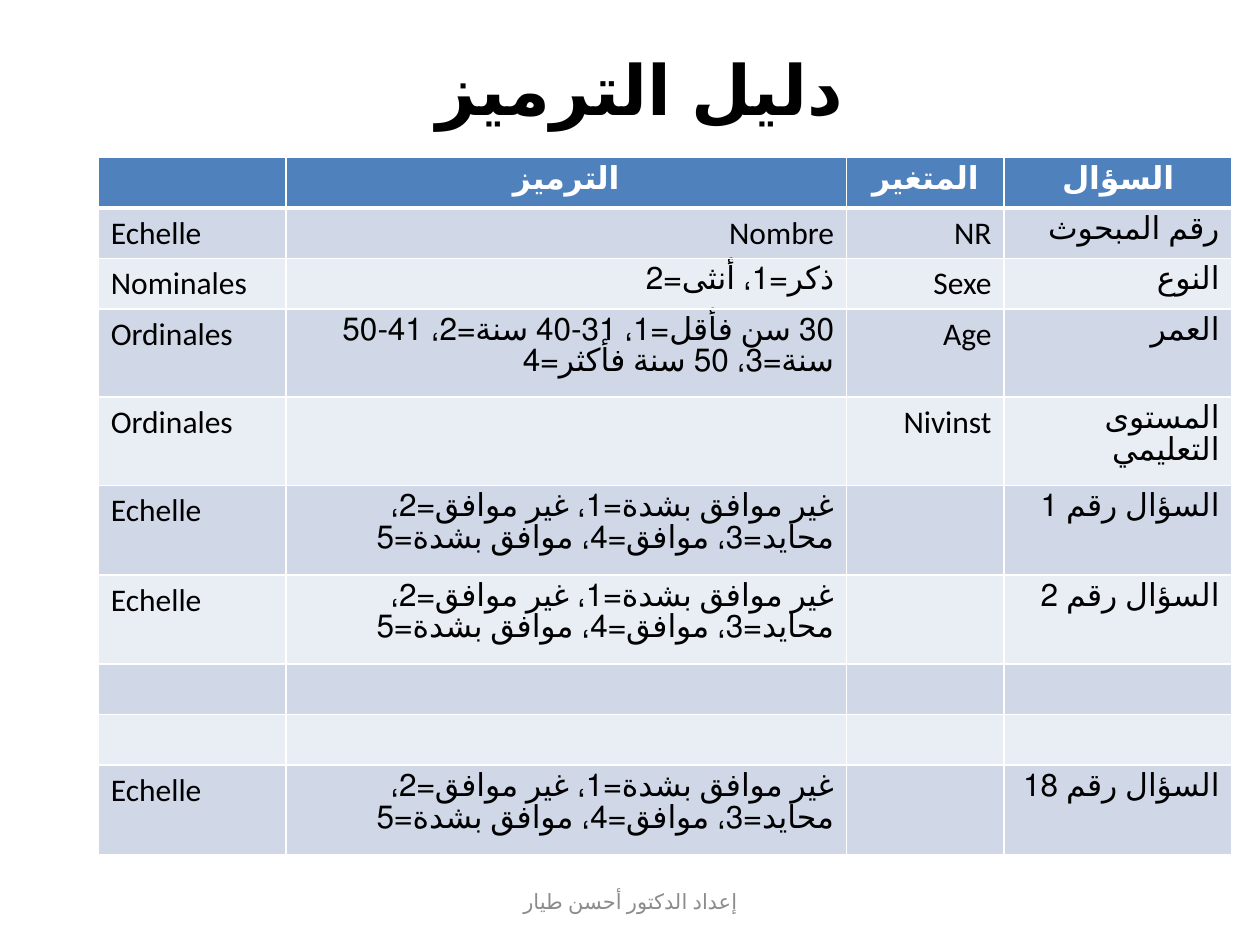
import pptx
import pptx.util
import pptx.dml.color
import pptx.enum.lang
import pptx.enum.text
import pptx.oxml
import pptx.oxml.ns
from pptx.util import Inches

ALIGN = pptx.enum.text.PP_ALIGN
LANGUAGE = pptx.enum.lang.MSO_LANGUAGE_ID
SCALE = "غير موافق بشدة=1، غير موافق=2، محايد=3، موافق=4، موافق بشدة=5"
HEADINGS = ["", "الترميز", "المتغير", "السؤال"]
CODES = [
    ("Echelle", "Nombre", "NR", "رقم المبحوث", 0.4),
    ("Nominales", "ذكر=1، أنثى=2", "Sexe", "النوع", 0.4),
    ("Ordinales", "30 سن فأقل=1، 31-40 سنة=2، 41-50 سنة=3، 50 سنة فأكثر=4",
     "Age", "العمر", 0.6),
    ("Ordinales", "", "Nivinst", "المستوى التعليمي", 0.6),
    ("Echelle", SCALE, "", "السؤال رقم 1", 0.71),
    ("Echelle", SCALE, "", "السؤال رقم 2", 0.71),
    ("", "", "", "", 0.4),
    ("", "", "", "", 0.4),
    ("Echelle", SCALE, "", "السؤال رقم 18", 0.71),
]
COLUMN_WIDTHS = [1.49, 4.45, 1.25, 1.81]
HEADER_HEIGHT = 0.4


def color(value):
    return pptx.dml.color.RGBColor.from_string(value)


def write(frame, text, size, ink, align, bold=False, rtl=False):
    paragraph = frame.paragraphs[0]
    paragraph.alignment = align
    if rtl:
        paragraph._p.get_or_add_pPr().set("rtl", "1")
    run = paragraph.add_run()
    run.text = text
    run.font.name = "Calibri"
    run.font.size = pptx.util.Pt(size)
    run.font.bold = bold
    run.font.color.rgb = color(ink)
    run.font.language_id = (
        LANGUAGE.FRENCH if text.isascii() else LANGUAGE.ARABIC_ALGERIA)


def add_line_of_text(slide, box, text, size, ink, **style):
    frame = slide.shapes.add_textbox(*map(Inches, box)).text_frame
    frame.word_wrap = True
    frame.vertical_anchor = pptx.enum.text.MSO_ANCHOR.MIDDLE
    write(frame, text, size, ink, ALIGN.CENTER, **style)


def set_borders(cell, top, bottom):
    properties = cell._tc.get_or_add_tcPr()
    for side, points in (("L", 1), ("R", 1), ("T", top), ("B", bottom)):
        properties.append(pptx.oxml.parse_xml(
            f'<a:ln{side} {pptx.oxml.ns.nsdecls("a")} w="{pptx.util.Pt(points)}">'
            f'<a:solidFill><a:srgbClr val="FFFFFF"/></a:solidFill></a:ln{side}>'))


def fill_cell(cell, text, row, column):
    header = row == 0
    set_borders(cell, 3 if row == 1 else 1, 3 if header else 1)
    cell.fill.solid()
    cell.fill.fore_color.rgb = color(
        "4F81BD" if header else ("E9EDF4", "D0D8E8")[row % 2])
    if not text:
        return
    if header:
        write(cell.text_frame, text, 18, "FFFFFF", ALIGN.CENTER, bold=True)
    elif column == 0:
        write(cell.text_frame, text, 18, "000000", ALIGN.LEFT)
    else:
        write(cell.text_frame, text, 18, "000000", ALIGN.RIGHT, rtl=True)


def add_coding_table(slide, box):
    rows = [(*HEADINGS, HEADER_HEIGHT), *CODES]
    table = slide.shapes.add_table(
        len(rows), len(HEADINGS), *map(Inches, box)).table
    for column, width in zip(table.columns, COLUMN_WIDTHS):
        column.width = Inches(width)
    for row, (*texts, height) in enumerate(rows):
        table.rows[row].height = Inches(height)
        for column, text in enumerate(texts):
            fill_cell(table.cell(row, column), text, row, column)


def main():
    deck = pptx.Presentation()
    deck.slide_width, deck.slide_height = Inches(10), Inches(7.5)
    slide = deck.slides.add_slide(deck.slide_layouts[6])
    add_line_of_text(slide, (0.5, 0.3, 9, 0.79), "دليل الترميز ", 39.6,
                     "000000", bold=True, rtl=True)
    add_coding_table(slide, (0.78, 1.25, 9, 5.33))
    add_line_of_text(slide, (3.42, 6.95, 3.17, 0.4),
                     "إعداد الدكتور أحسن طيار", 12, "8C8C8C")
    deck.save("out.pptx")


if __name__ == "__main__":
    main()
